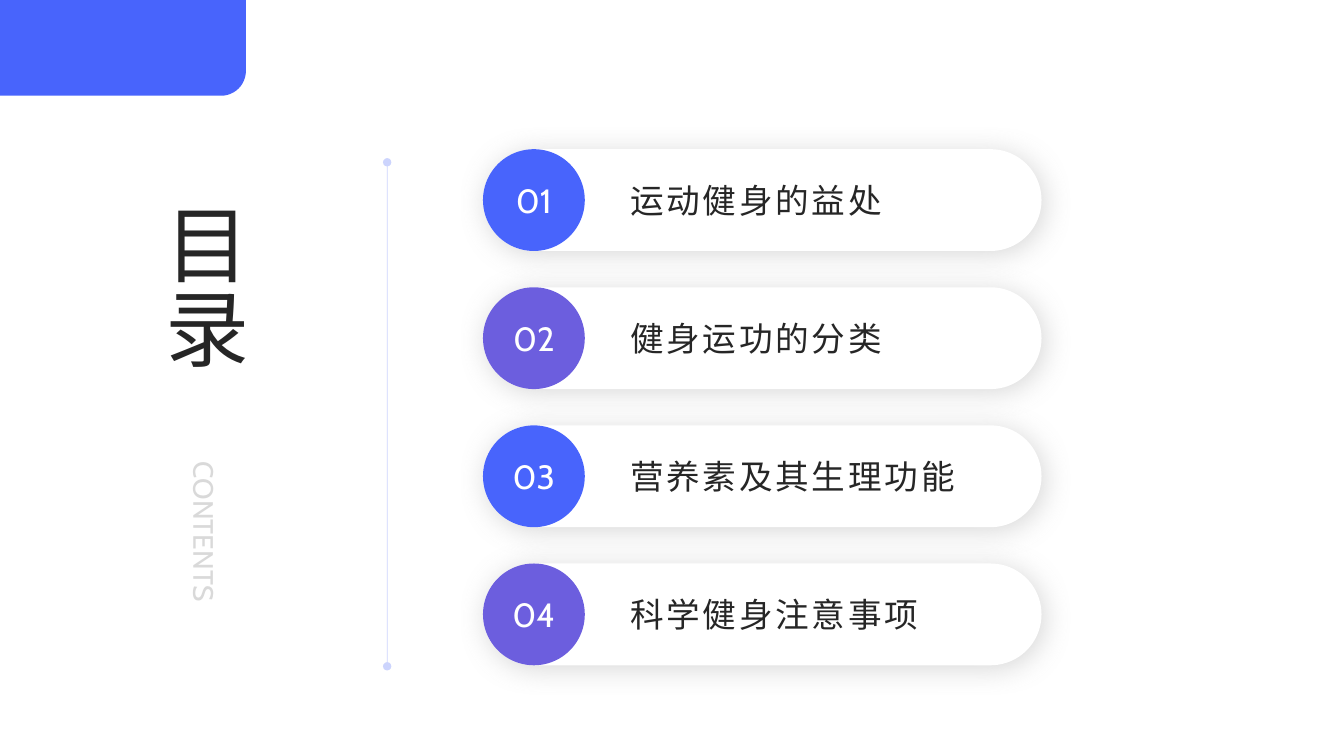
from lxml.etree import SubElement
from pptx import Presentation
from pptx.dml.color import RGBColor
from pptx.enum.shapes import MSO_CONNECTOR as CONNECTOR, MSO_SHAPE as SHAPE
from pptx.enum.text import MSO_ANCHOR as ANCHOR, MSO_AUTO_SIZE as AUTO_SIZE, PP_ALIGN as ALIGN
from pptx.oxml.ns import qn
from pptx.util import Inches, Pt

BLUE, PURPLE, INK, GREY, WHITE = "4864FC", "6C5EDE", "262626", "D9D9D9", "FFFFFF"
TOPICS = ["运动健身的益处", "健身运功的分类", "营养素及其生理功能", "科学健身注意事项"]


def color(value):
    """Turn a hex string into a colour."""
    return RGBColor.from_string(value)


def write(frame, text, size, ink, align=ALIGN.LEFT, spacing=0):
    """Write one run into a vertically centred text frame."""
    frame.word_wrap = True
    frame.auto_size = AUTO_SIZE.NONE
    frame.vertical_anchor = ANCHOR.MIDDLE
    paragraph = frame.paragraphs[0]
    paragraph.alignment = align
    run = paragraph.add_run()
    run.text = text
    run.font.name = "Cabin"
    run.font.size = Pt(size)
    run.font.color.rgb = color(ink)
    if spacing:
        run.font._element.set("spc", str(spacing * 100))
    return paragraph


def add_solid(slide, kind, left, top, width, height, fill):
    """Add a filled preset shape without outline or shadow."""
    solid = slide.shapes.add_shape(kind, Inches(left), Inches(top), Inches(width), Inches(height))
    solid.shadow.inherit = False
    solid.fill.solid()
    solid.fill.fore_color.rgb = color(fill)
    solid.line.fill.background()
    return solid


def add_soft_shadow(solid):
    """Give a shape a soft grey shadow to the lower right."""
    effects = solid._element.spPr.find(qn("a:effectLst"))
    shadow = SubElement(effects, qn("a:outerShdw"), blurRad=str(Pt(20)), dist=str(Pt(3)),
                        dir="2700000", algn="tl", rotWithShape="0")
    tint = SubElement(shadow, qn("a:srgbClr"), val="808080")
    SubElement(tint, qn("a:alpha"), val="30000")


def add_corner(slide, left, top, width, height):
    """Add the blue block with its lower right corner rounded."""
    corner = add_solid(slide, SHAPE.ROUND_1_RECTANGLE, left, top, width, height, BLUE)
    corner.adjustments[0] = 0.26
    corner._element.spPr.find(qn("a:xfrm")).set("flipV", "1")


def add_divider(slide, left, top, height):
    """Add the pale vertical line with a dot at each end."""
    x = Inches(left)
    divider = slide.shapes.add_connector(CONNECTOR.STRAIGHT, x, Inches(top), x, Inches(top + height))
    divider.line.width = Pt(0.5)
    divider.line.color.rgb = color("002AF9")
    outline = divider.line._get_or_add_ln()
    SubElement(outline.find(".//" + qn("a:srgbClr")), qn("a:alpha"), val="20000")
    for end in ("a:headEnd", "a:tailEnd"):
        SubElement(outline, qn(end), type="oval")
    SubElement(divider._element.spPr, qn("a:effectLst"))


def set_vertical(holder, left, top, width, height):
    """Place a placeholder and turn its text vertical."""
    holder.left, holder.top = Inches(left), Inches(top)
    holder.width, holder.height = Inches(width), Inches(height)
    holder.text_frame._txBody.bodyPr.set("vert", "eaVert")
    return holder.text_frame


def add_heading(slide, left, top, width):
    """Fill the title and the grey caption below it."""
    title = set_vertical(slide.shapes.title, left, top, width, 2.32)
    write(title, "目录", 60, INK)
    caption = set_vertical(slide.placeholders[1], left, top + 2.57, width, 2.13)
    paragraph = write(caption, "CONTENTS", 20, GREY, ALIGN.JUSTIFY)
    paragraph.space_before = Pt(0)
    paragraph.space_after = Pt(10)
    properties = paragraph._p.get_or_add_pPr()
    properties.set("marL", "0")
    properties.set("indent", "0")
    SubElement(properties, qn("a:buNone"))


def add_topic(slide, left, top, width, height, number, topic, accent):
    """Add one pill with its numbered disc and topic."""
    pill = add_solid(slide, SHAPE.ROUNDED_RECTANGLE, left, top, width, height, WHITE)
    pill.adjustments[0] = 0.5
    add_soft_shadow(pill)
    disc = add_solid(slide, SHAPE.OVAL, left, top, height, height, accent)
    frame = disc.text_frame
    frame.margin_left = frame.margin_right = frame.margin_top = frame.margin_bottom = 0
    write(frame, f"{number:02}", 24, WHITE, ALIGN.CENTER)
    label = slide.shapes.add_textbox(Inches(left + 1.36), Inches(top),
                                     Inches(width - 1.35), Inches(height)).text_frame
    label.margin_top = label.margin_bottom = 0
    write(label, topic, 24, INK, spacing=2)


def add_topics(slide, left, top, width, pitch):
    """Stack the topics at an equal pitch with alternating accents."""
    for index, topic in enumerate(TOPICS):
        accent = (BLUE, PURPLE)[index % 2]
        add_topic(slide, left, top + index * pitch, width, 1.01, index + 1, topic, accent)


def main():
    """Build the contents slide and save it."""
    deck = Presentation()
    deck.slide_width, deck.slide_height = Inches(13.33), Inches(7.5)
    slide = deck.slides.add_slide(deck.slide_layouts[1])
    add_corner(slide, -0.02, 0, 2.46, 0.95)
    add_divider(slide, 3.84, 1.61, 5)
    add_heading(slide, 1.28, 1.96, 1.5)
    add_topics(slide, 4.79, 1.48, 5.54, 1.37)
    deck.save("out.pptx")


if __name__ == "__main__":
    main()
